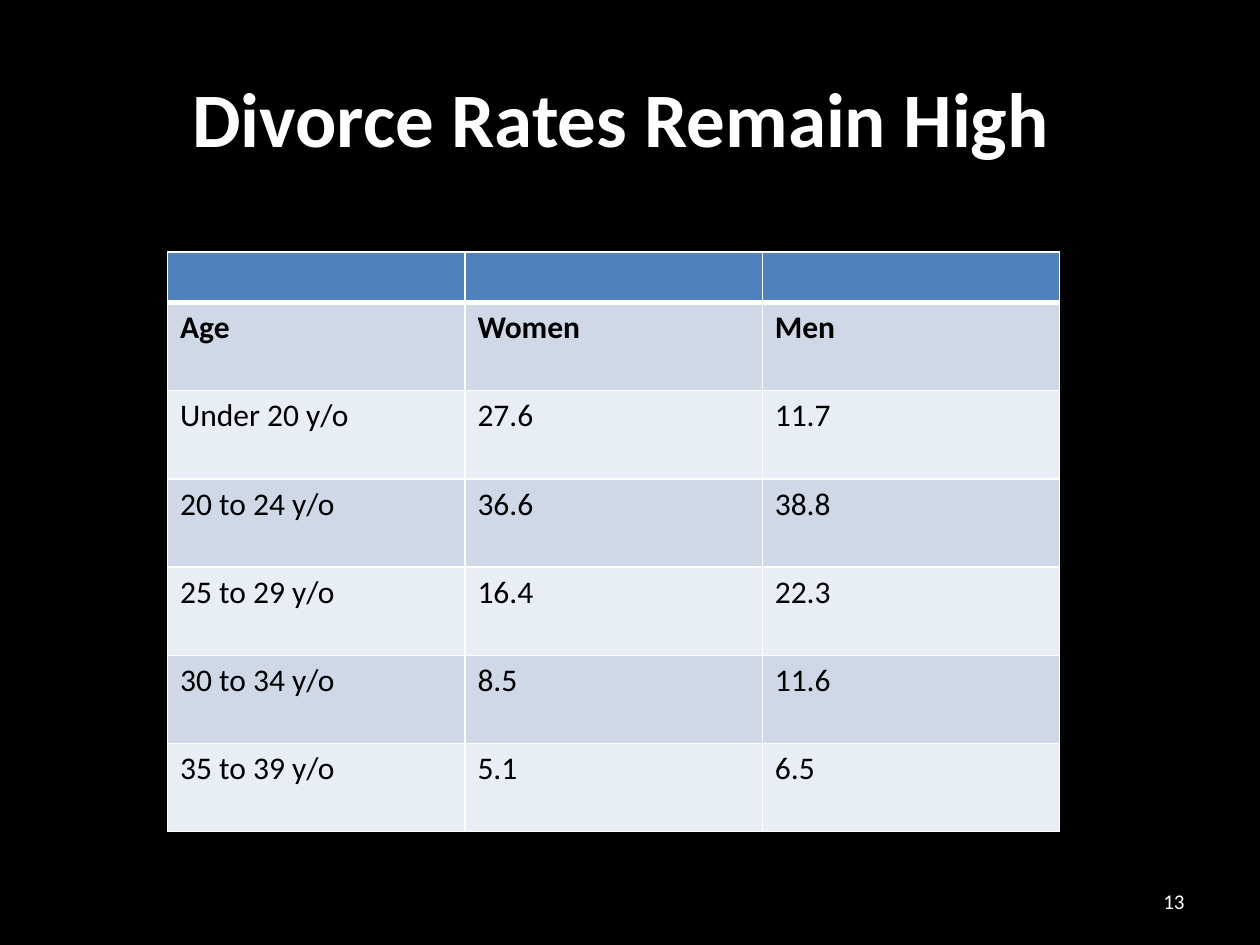
from lxml import etree
from pptx import Presentation
from pptx.dml.color import RGBColor
from pptx.enum import text
from pptx.oxml.ns import qn
from pptx.util import Inches, Pt

BLACK = RGBColor(0x00, 0x00, 0x00)
WHITE = RGBColor(0xFF, 0xFF, 0xFF)
HEADER_BLUE = RGBColor(0x4F, 0x81, 0xBD)
BAND_DARK = RGBColor(0xD0, 0xD8, 0xE8)
BAND_LIGHT = RGBColor(0xE9, 0xED, 0xF4)
FONT = "Calibri"

DIVORCE_RATES = [
    ("", "", ""),
    ("Age", "Women", "Men"),
    ("Under 20 y/o", "27.6", "11.7"),
    ("20 to 24 y/o", "36.6", "38.8"),
    ("25 to 29 y/o", "16.4", "22.3"),
    ("30 to 34 y/o", "8.5", "11.6"),
    ("35 to 39 y/o", "5.1", "6.5"),
]


def write(frame, words, size, color, bold=False, align=text.PP_ALIGN.LEFT):
    frame.text = words
    paragraph = frame.paragraphs[0]
    paragraph.alignment = align
    for run in paragraph.runs:
        run.font.name = FONT
        run.font.size = Pt(size)
        run.font.bold = bold
        run.font.color.rgb = color


def set_title(page, words):
    title = page.shapes.title
    title.left, title.top = Inches(0.5), Inches(0.3)
    title.width, title.height = Inches(9), Inches(1.25)
    title.text_frame.vertical_anchor = text.MSO_ANCHOR.MIDDLE
    write(title.text_frame, words, 44, WHITE, True, text.PP_ALIGN.CENTER)


def add_page_number(page, number):
    box = page.shapes.add_textbox(Inches(7.17), Inches(6.95), Inches(2.33), Inches(0.4))
    box.text_frame.word_wrap = True
    box.text_frame.vertical_anchor = text.MSO_ANCHOR.MIDDLE
    write(box.text_frame, number, 12, WHITE, align=text.PP_ALIGN.RIGHT)


def set_borders(cell, widths):
    properties = cell._tc.get_or_add_tcPr()
    for position, (side, width) in enumerate(widths.items()):
        line = etree.Element(qn(f"a:{side}"), w=str(Pt(width)))
        fill = etree.SubElement(line, qn("a:solidFill"))
        etree.SubElement(fill, qn("a:srgbClr"), val=str(WHITE))
        properties.insert(position, line)


def row_color(index):
    if index == 0:
        return HEADER_BLUE
    return BAND_DARK if index % 2 else BAND_LIGHT


def add_rate_table(page, rows):
    table = page.shapes.add_table(
        len(rows), len(rows[0]), Inches(1.33), Inches(2), Inches(7.08), Inches(4.6)
    ).table
    for column in table.columns:
        column.width = Inches(2.36)
    for r, values in enumerate(rows):
        table.rows[r].height = Inches(0.7 if r else 0.4)
        widths = {"lnL": 1, "lnR": 1, "lnT": 3 if r == 1 else 1, "lnB": 1 if r else 3}
        for c, value in enumerate(values):
            cell = table.cell(r, c)
            cell.fill.solid()
            cell.fill.fore_color.rgb = row_color(r)
            set_borders(cell, widths)
            write(cell.text_frame, value, 18, BLACK, bold=r == 1)


def main():
    deck = Presentation()
    deck.slide_width, deck.slide_height = Inches(10), Inches(7.5)
    page = deck.slides.add_slide(deck.slide_layouts[5])
    page.background.fill.solid()
    page.background.fill.fore_color.rgb = BLACK
    set_title(page, "Divorce Rates Remain High ")
    add_page_number(page, "13")
    add_rate_table(page, DIVORCE_RATES)
    deck.save("out.pptx")


if __name__ == "__main__":
    main()
